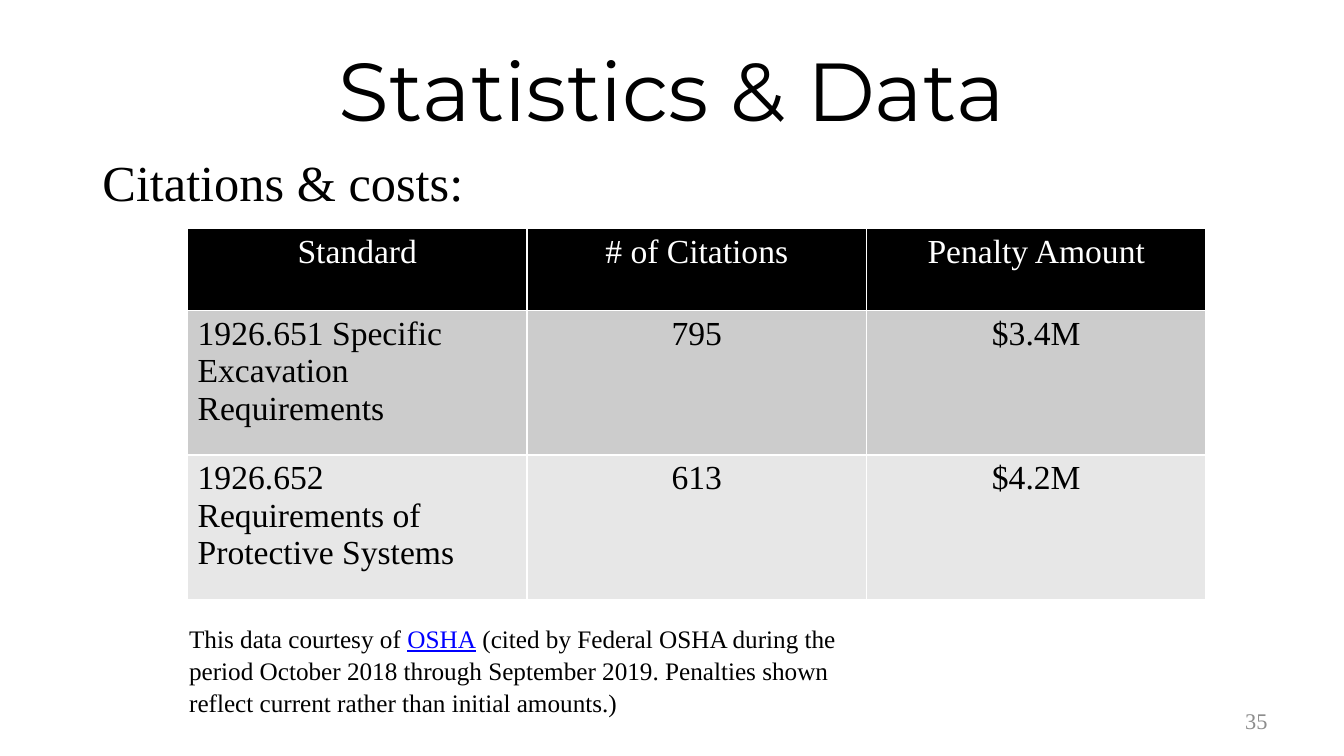
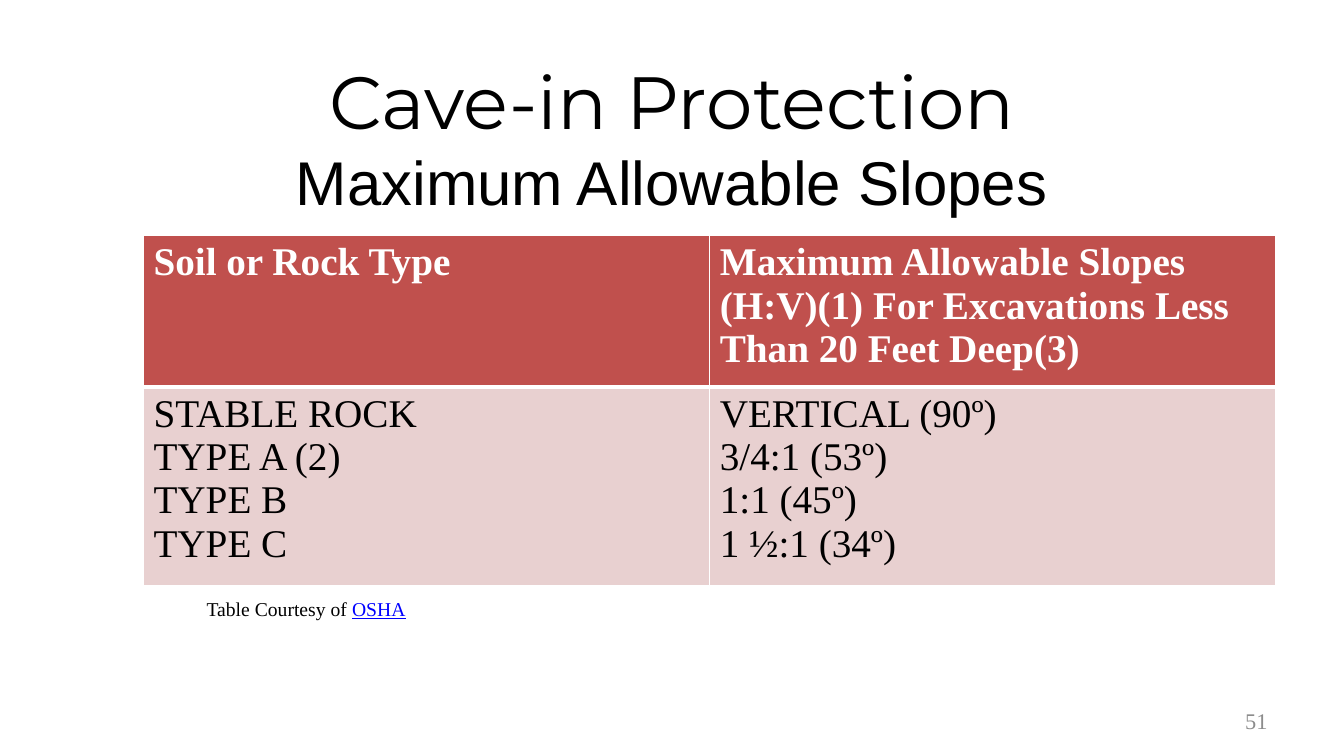
from dataclasses import dataclass
from typing import Sequence

from lxml import etree
from pptx import Presentation
from pptx.dml.color import RGBColor
from pptx.enum import text as t
from pptx.oxml import ns
from pptx.util import Pt

BLACK, WHITE, GREY, LINK = "000000", "FFFFFF", "8C8C8C", "0000FF"
SERIF, DISPLAY, SANS = "Times New Roman", "Montserrat", "Arial"
TITLE_ONLY, TITLE_AND_BODY = 5, 1
LEFT, CENTER, RIGHT = t.PP_ALIGN.LEFT, t.PP_ALIGN.CENTER, t.PP_ALIGN.RIGHT


@dataclass(frozen=True)
class Box:
    left: float
    top: float
    width: float
    height: float


@dataclass(frozen=True)
class Style:
    size: float
    font: str = SERIF
    color: str = BLACK
    bold: bool = False
    underline: bool = False


@dataclass(frozen=True)
class TableDesign:
    box: Box
    row_heights: Sequence[float]
    row_fills: Sequence[str]
    size: float
    header_bold: bool
    header_rule: float
    header_align: t.PP_ALIGN
    value_align: t.PP_ALIGN


@dataclass(frozen=True)
class TitleLine:
    text: str
    style: Style


PAGE_NUMBER_BOX = Box(688.5, 500.5, 224, 28.5)


def rgb(color: str) -> RGBColor:
    return RGBColor.from_string(color)


def format_run(run, style: Style) -> None:
    font = run.font
    font.size, font.name = Pt(style.size), style.font
    font.bold, font.underline = style.bold, style.underline
    font.color.rgb = rgb(style.color)


def place(shape, box: Box) -> None:
    shape.left, shape.top = Pt(box.left), Pt(box.top)
    shape.width, shape.height = Pt(box.width), Pt(box.height)


def add_text_box(slide, box: Box, wrap: bool = True):
    shape = slide.shapes.add_textbox(
        Pt(box.left), Pt(box.top), Pt(box.width), Pt(box.height))
    shape.text_frame.word_wrap = wrap
    return shape.text_frame


def add_slide(presentation, layout: int, title_box: Box,
              title_lines: Sequence[TitleLine], number: int):
    """Add a slide with its title and page number."""
    slide = presentation.slides.add_slide(presentation.slide_layouts[layout])
    title = slide.shapes.title
    place(title, title_box)
    frame = title.text_frame
    frame.text = "\n".join(line.text for line in title_lines)
    frame.auto_size = t.MSO_AUTO_SIZE.NONE
    frame.vertical_anchor = t.MSO_ANCHOR.MIDDLE
    for paragraph, line in zip(frame.paragraphs, title_lines):
        paragraph.alignment = CENTER
        format_run(paragraph.runs[0], line.style)

    frame = add_text_box(slide, PAGE_NUMBER_BOX)
    frame.text = str(number)
    frame.vertical_anchor = t.MSO_ANCHOR.MIDDLE
    frame.paragraphs[0].alignment = RIGHT
    format_run(frame.paragraphs[0].runs[0], Style(16, color=GREY))
    return slide


def fill_body(slide, box: Box, text: str) -> None:
    body = slide.placeholders[1]
    place(body, box)
    body.text_frame.text = text
    body.text_frame.auto_size = t.MSO_AUTO_SIZE.NONE
    paragraph = body.text_frame.paragraphs[0]
    properties = paragraph._p.get_or_add_pPr()
    properties.set("marL", "0")
    properties.set("indent", "0")
    etree.SubElement(properties, ns.qn("a:buNone"))
    paragraph.space_before = Pt(0)
    format_run(paragraph.runs[0], Style(36))


def add_credit(slide, box: Box, size: float, before: str, link: str,
               after: str = "", wrap: bool = True,
               line_spacing: float = 1.0) -> None:
    """Add a source note whose middle part looks like a link."""
    frame = add_text_box(slide, box, wrap)
    frame.auto_size = t.MSO_AUTO_SIZE.SHAPE_TO_FIT_TEXT
    paragraph = frame.paragraphs[0]
    paragraph.line_spacing = line_spacing
    plain, linked = Style(size), Style(size, color=LINK, underline=True)
    for text, style in ((before, plain), (link, linked), (after, plain)):
        if text:
            run = paragraph.add_run()
            run.text = text
            format_run(run, style)


def set_borders(cell, top: float, bottom: float) -> None:
    """Draw white cell borders; the side borders are 1 point wide."""
    properties = cell._tc.get_or_add_tcPr()
    widths = {"lnL": 1, "lnR": 1, "lnT": top, "lnB": bottom}
    for position, (tag, width) in enumerate(widths.items()):
        line = etree.Element(ns.qn(f"a:{tag}"), w=str(Pt(width)))
        fill = etree.SubElement(line, ns.qn("a:solidFill"))
        etree.SubElement(fill, ns.qn("a:srgbClr"), val=WHITE)
        properties.insert(position, line)


def add_table(slide, design: TableDesign, rows: Sequence[Sequence[str]]) -> None:
    box, column_count = design.box, len(rows[0])
    table = slide.shapes.add_table(
        len(rows), column_count, Pt(box.left), Pt(box.top),
        Pt(box.width), Pt(box.height)).table
    for column in table.columns:
        column.width = Pt(box.width / column_count)
    for row_index, values in enumerate(rows):
        table.rows[row_index].height = Pt(design.row_heights[row_index])
        is_header = row_index == 0
        style = Style(design.size, color=WHITE if is_header else BLACK,
                      bold=is_header and design.header_bold)
        for column_index, value in enumerate(values):
            cell = table.cell(row_index, column_index)
            cell.text_frame.text = value
            cell.fill.solid()
            cell.fill.fore_color.rgb = rgb(design.row_fills[row_index])
            set_borders(cell,
                        top=design.header_rule if row_index == 1 else 1,
                        bottom=design.header_rule if is_header else 1)
            if is_header:
                alignment = design.header_align
            else:
                alignment = design.value_align if column_index else LEFT
            for paragraph in cell.text_frame.paragraphs:
                paragraph.alignment = alignment
                format_run(paragraph.runs[0], style)


def build_statistics(presentation) -> None:
    slide = add_slide(presentation, TITLE_AND_BODY, Box(66, 11, 828, 104.5),
                      [TitleLine("Statistics & Data", Style(58.7, DISPLAY))], 35)
    fill_body(slide, Box(66, 104.5, 281, 50.5), "Citations & costs:")
    design = TableDesign(
        box=Box(134, 163, 727.5, 265), row_heights=(59, 103, 103),
        row_fills=(BLACK, "CCCCCC", "E7E7E7"), size=24, header_bold=False,
        header_rule=1, header_align=CENTER, value_align=CENTER)
    add_table(slide, design, [
        ("Standard", "# of Citations", "Penalty Amount"),
        ("1926.651 Specific Excavation Requirements", "795", "$3.4M"),
        ("1926.652 Requirements of Protective Systems", "613", "$4.2M"),
    ])
    add_credit(slide, Box(128, 440, 489, 72.5), 18,
               "This data courtesy of ", "OSHA",
               " (cited by Federal OSHA during the period October 2018 through "
               "September 2019. Penalties shown reflect current rather than "
               "initial amounts.)", line_spacing=1.07)


def build_slopes(presentation) -> None:
    slide = add_slide(presentation, TITLE_ONLY, Box(48, 52.5, 864, 90), [
        TitleLine("Cave-in Protection", Style(52.8, DISPLAY)),
        TitleLine("Maximum Allowable Slopes", Style(44.1, SANS)),
    ], 51)
    design = TableDesign(
        box=Box(102.5, 168.5, 809, 240), row_heights=(104, 136),
        row_fills=("C0504D", "E8D0D0"), size=28, header_bold=True,
        header_rule=3, header_align=LEFT, value_align=LEFT)
    add_table(slide, design, [
        ("Soil or Rock Type",
         "Maximum Allowable Slopes (H:V)(1) For Excavations Less Than "
         "20 Feet Deep(3)"),
        ("STABLE ROCK\nTYPE A (2)\nTYPE B\nTYPE C",
         "VERTICAL (90º)\n3/4:1 (53º)\n1:1 (45º)\n1 ½:1 (34º)"),
    ])
    add_credit(slide, Box(140.5, 422.5, 157.5, 24.5), 14,
               "Table Courtesy of ", "OSHA", wrap=False)


def main() -> None:
    presentation = Presentation()
    presentation.slide_width, presentation.slide_height = Pt(960), Pt(540)
    build_statistics(presentation)
    build_slopes(presentation)
    presentation.save("out.pptx")


if __name__ == "__main__":
    main()
